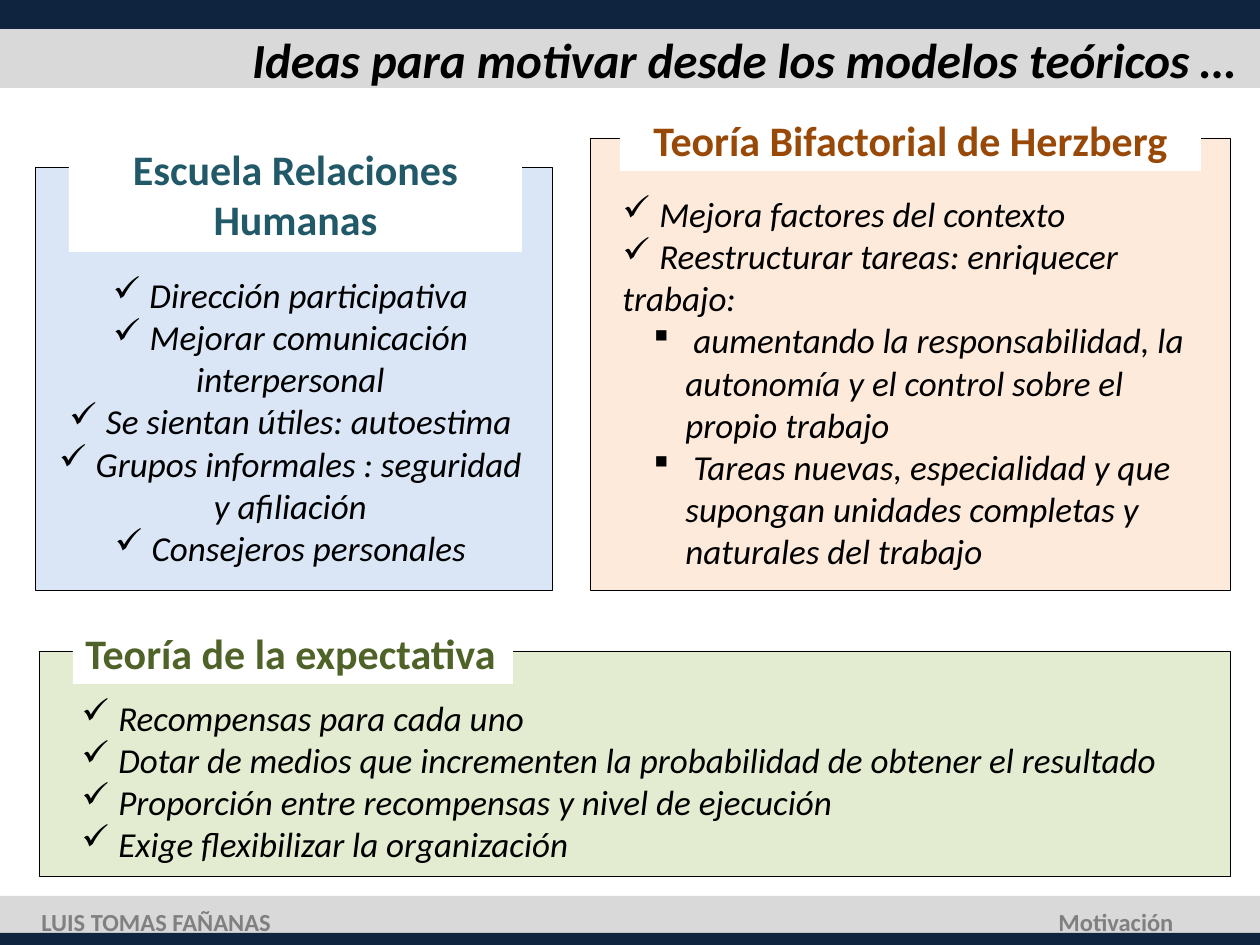
from dataclasses import dataclass
from typing import NamedTuple

from lxml import etree
from pptx import Presentation
from pptx import util as u
from pptx.dml.color import RGBColor
from pptx.enum import shapes, text
from pptx.oxml import ns

EMU_PER_PX = 914400 / 126


@dataclass(frozen=True)
class Theme:
    font: str = "Calibri"
    bullet_font: str = "Wingdings"
    check: str = "ü"  # check mark in Wingdings
    square: str = "§"  # small square in Wingdings
    ink: str = "000000"
    paper: str = "FFFFFF"
    navy: str = "0F243E"
    grey: str = "D9D9D9"
    footer: str = "808080"
    title_pt: int = 28
    heading_pt: int = 24
    body_pt: int = 20
    footer_pt: int = 14
    outline_pt: float = 0.25


class Box(NamedTuple):
    left: int
    top: int
    width: int
    height: int


class Item(NamedTuple):
    words: str
    sub: bool = False


@dataclass(frozen=True)
class Panel:
    frame: Box
    fill: str
    heading: str
    heading_box: Box
    heading_color: str
    body_box: Box
    items: tuple[Item, ...]
    heading_align: text.PP_ALIGN = text.PP_ALIGN.CENTER
    body_align: text.PP_ALIGN = text.PP_ALIGN.LEFT
    heading_wrap: bool = True


THEME = Theme()
CENTER, LEFT, RIGHT = text.PP_ALIGN.CENTER, text.PP_ALIGN.LEFT, text.PP_ALIGN.RIGHT

BANDS = (
    (Box(0, 896, 1260, 42), THEME.grey),
    (Box(0, 933, 1260, 12), THEME.navy),
    (Box(0, 0, 1260, 88), THEME.grey),
    (Box(0, 0, 1260, 29), THEME.navy),
)

PANELS = (
    Panel(
        Box(35, 167, 517, 423), "DAE5F6",
        "Escuela Relaciones Humanas", Box(69, 137, 453, 115), "215968",
        Box(40, 266, 501, 310),
        (
            Item("Dirección participativa"),
            Item("Mejorar comunicación interpersonal"),
            Item("Se sientan útiles: autoestima"),
            Item("Grupos informales : seguridad y afiliación"),
            Item("Consejeros personales"),
        ),
        body_align=CENTER,
    ),
    Panel(
        Box(590, 138, 640, 452), "FDEADB",
        "Teoría Bifactorial de Herzberg", Box(620, 108, 581, 63), "984807",
        Box(610, 185, 610, 394),
        (
            Item("Mejora factores del contexto"),
            Item("Reestructurar tareas: enriquecer trabajo:"),
            Item("aumentando la responsabilidad, la autonomía y el control "
                 "sobre el propio trabajo", sub=True),
            Item("Tareas nuevas, especialidad y que supongan unidades "
                 "completas y naturales del trabajo", sub=True),
        ),
    ),
    Panel(
        Box(39, 651, 1191, 225), "E3ECD0",
        "Teoría de la expectativa", Box(73, 621, 440, 63), "4F6228",
        Box(69, 689, 1152, 183),
        (
            Item("Recompensas para cada uno"),
            Item("Dotar de medios que incrementen la probabilidad de obtener el resultado"),
            Item("Proporción entre recompensas y nivel de ejecución"),
            Item("Exige flexibilizar la organización"),
        ),
        heading_align=LEFT, heading_wrap=False,
    ),
)


def px(length: int) -> u.Emu:
    return u.Emu(round(length * EMU_PER_PX))


def apply(target, values: dict) -> None:
    for name, value in values.items():
        setattr(target, name, value)


def format_font(font, size: int, color: str, bold: bool = False, italic: bool = False) -> None:
    apply(font, {"name": THEME.font, "size": u.Pt(size), "bold": bold, "italic": italic})
    font.color.rgb = RGBColor.from_string(color)


def add_rect(slide, box: Box, fill: str, outlined: bool = False):
    rect = slide.shapes.add_shape(shapes.MSO_SHAPE.RECTANGLE, *map(px, box))
    rect.shadow.inherit = False
    rect.fill.solid()
    rect.fill.fore_color.rgb = RGBColor.from_string(fill)
    if outlined:
        rect.line.color.rgb = RGBColor.from_string(THEME.ink)
        rect.line.width = u.Pt(THEME.outline_pt)
    else:
        rect.line.fill.background()
    return rect


def write_line(shape, words: str, size: int, color: str, align: text.PP_ALIGN,
               wrap: bool, anchor: text.MSO_ANCHOR, italic: bool = False) -> None:
    frame = shape.text_frame
    apply(frame, {"word_wrap": wrap, "vertical_anchor": anchor, "text": words})
    line = frame.paragraphs[0]
    line.alignment = align
    format_font(line.runs[0].font, size, color, bold=True, italic=italic)


def add_bullet(paragraph, sub: bool) -> None:
    props = paragraph._p.get_or_add_pPr()
    props.set("marL", str(px(63) if sub else 0))
    props.set("indent", str(-px(32) if sub else 0))
    etree.SubElement(props, ns.qn("a:buFont"), typeface=THEME.bullet_font,
                     pitchFamily="2", charset="2")
    etree.SubElement(props, ns.qn("a:buChar"), char=THEME.square if sub else THEME.check)


def add_items(slide, panel: Panel) -> None:
    frame = slide.shapes.add_textbox(*map(px, panel.body_box)).text_frame
    apply(frame, {"word_wrap": True, "vertical_anchor": text.MSO_ANCHOR.MIDDLE})
    for index, item in enumerate(panel.items):
        paragraph = frame.add_paragraph() if index else frame.paragraphs[0]
        add_bullet(paragraph, item.sub)
        paragraph.alignment = panel.body_align
        run = paragraph.add_run()
        run.text = f" {item.words}"
        format_font(run.font, THEME.body_pt, THEME.ink, italic=True)


def add_panel(slide, panel: Panel) -> None:
    add_rect(slide, panel.frame, panel.fill, outlined=True)
    heading = add_rect(slide, panel.heading_box, THEME.paper)
    write_line(heading, panel.heading, THEME.heading_pt, panel.heading_color,
               panel.heading_align, panel.heading_wrap, text.MSO_ANCHOR.TOP)
    add_items(slide, panel)


def add_footer(slide, box: Box, words: str, align: text.PP_ALIGN) -> None:
    label = slide.shapes.add_textbox(*map(px, box))
    write_line(label, words, THEME.footer_pt, THEME.footer, align, False,
               text.MSO_ANCHOR.MIDDLE)


def main() -> None:
    deck = Presentation()
    apply(deck, {"slide_width": px(1260), "slide_height": px(945)})
    slide = deck.slides.add_slide(deck.slide_layouts[5])

    # Header and footer bands
    for box, fill in BANDS:
        add_rect(slide, box, fill)

    # Title, raised above the bands
    title = slide.shapes.title
    title.element.getparent().append(title.element)
    apply(title, dict(zip(Box._fields, map(px, Box(236, 29, 1012, 60)))))
    write_line(title, "Ideas para motivar desde los modelos teóricos …", THEME.title_pt,
               THEME.ink, RIGHT, True, text.MSO_ANCHOR.MIDDLE, italic=True)

    # One panel per theory
    for panel in PANELS:
        add_panel(slide, panel)

    # Footer labels
    add_footer(slide, Box(29, 900, 257, 43), "LUIS TOMAS FAÑANAS", LEFT)
    add_footer(slide, Box(1045, 900, 141, 43), "Motivación", RIGHT)

    deck.save("out.pptx")


if __name__ == "__main__":
    main()
